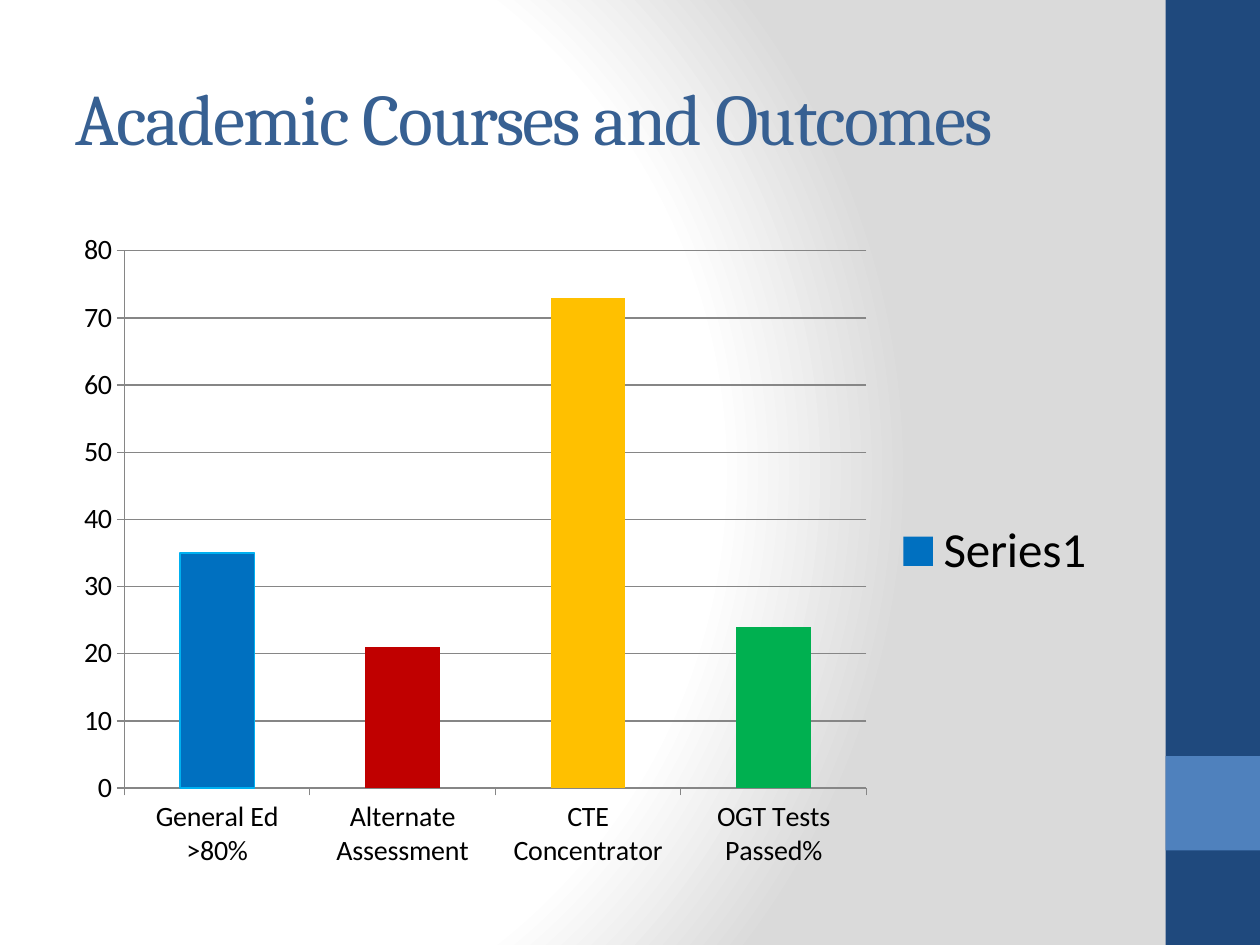
from typing import NamedTuple

from lxml import etree
from pptx import Presentation
from pptx.chart.data import CategoryChartData
from pptx.dml.color import RGBColor
from pptx.enum.chart import XL_CHART_TYPE, XL_LEGEND_POSITION, XL_TICK_MARK
from pptx.enum.shapes import MSO_SHAPE
from pptx.enum.text import MSO_ANCHOR
from pptx.oxml.ns import qn
from pptx.util import Inches, Pt

COLUMNS = XL_CHART_TYPE.COLUMN_CLUSTERED
LEGEND_RIGHT = XL_LEGEND_POSITION.RIGHT
TICK_OUTSIDE = XL_TICK_MARK.OUTSIDE
RECTANGLE = MSO_SHAPE.RECTANGLE
MIDDLE = MSO_ANCHOR.MIDDLE

AXIS_GREY = "868686"


class Band(NamedTuple):
    top: float
    height: float
    color: str


class Outcome(NamedTuple):
    label: str
    percent: int
    color: str


BANDS = [Band(0, 7.5, "1F497D"), Band(6, 0.75, "4F81BD")]
OUTCOMES = [
    Outcome("General Ed >80%", 35, "0070C0"),
    Outcome("Alternate Assessment", 21, "C00000"),
    Outcome("CTE Concentrator", 73, "FFC000"),
    Outcome("OGT Tests Passed%", 24, "00B050"),
]
GLOW_STOPS = [(0, "FFFFFF"), (75, "FFFFFF"), (100, "DADADA")]
GLOW_CENTRE = {"l": 20, "t": 50, "r": 100, "b": 50}


def rgb(color: str) -> RGBColor:
    return RGBColor.from_string(color)


def paint(fill, color: str) -> None:
    fill.solid()
    fill.fore_color.rgb = rgb(color)


def set_font(font, name: str, size: float, color: str) -> None:
    font.name = name
    font.size = Pt(size)
    font.color.rgb = rgb(color)


def paint_background(slide) -> None:
    slide.background.fill.gradient()
    glow = next(slide.element.iter(qn("a:gradFill")))
    for child in list(glow):
        glow.remove(child)
    stops = etree.SubElement(glow, qn("a:gsLst"))
    for position, color in GLOW_STOPS:
        stop = etree.SubElement(stops, qn("a:gs"), pos=str(position * 1000))
        etree.SubElement(stop, qn("a:srgbClr"), val=color)
    circle = etree.SubElement(glow, qn("a:path"), {"path": "circle"})
    edges = {side: str(share * 1000) for side, share in GLOW_CENTRE.items()}
    etree.SubElement(circle, qn("a:fillToRect"), edges)


def draw_band(slide, band: Band) -> None:
    stripe = slide.shapes.add_shape(
        RECTANGLE, Inches(9.25), Inches(band.top), Inches(0.75), Inches(band.height)
    )
    stripe.shadow.inherit = False
    paint(stripe.fill, band.color)
    stripe.line.fill.background()


def draw_title(slide, wording: str) -> None:
    title = slide.shapes.add_textbox(Inches(0.5), Inches(0.3), Inches(8.33), Inches(1.25))
    frame = title.text_frame
    frame.word_wrap = True
    frame.vertical_anchor = MIDDLE
    paragraph = frame.paragraphs[0]
    run = paragraph.add_run()
    run.text = wording
    set_font(paragraph.font, "Cambria", 41.4, "376092")
    run.font._element.set("spc", "-100")


def style_axis(axis) -> None:
    axis.major_tick_mark = TICK_OUTSIDE
    set_font(axis.tick_labels.font, "Calibri", 16, "000000")
    axis.format.line.color.rgb = rgb(AXIS_GREY)
    axis.format.line.width = Pt(0.75)


def draw_outcomes_chart(slide) -> None:
    outcomes_data = CategoryChartData()
    outcomes_data.categories = [outcome.label for outcome in OUTCOMES]
    outcomes_data.add_series("Series1", [outcome.percent for outcome in OUTCOMES])
    chart = slide.shapes.add_chart(
        COLUMNS, Inches(0.5), Inches(1.75), Inches(8.33), Inches(5.25), outcomes_data
    ).chart
    set_font(chart.font, "Calibri", 10, "000000")
    chart.has_title = False

    chart.has_legend = True
    chart.legend.position = LEGEND_RIGHT
    chart.legend.include_in_layout = False
    set_font(chart.legend.font, "Calibri", 28, "000000")

    style_axis(chart.category_axis)
    percent_axis = chart.value_axis
    style_axis(percent_axis)
    percent_axis.minimum_scale = 0
    percent_axis.maximum_scale = 80
    percent_axis.major_unit = 10
    percent_axis.has_major_gridlines = True
    gridline = percent_axis.major_gridlines.format.line
    gridline.color.rgb = rgb(AXIS_GREY)
    gridline.width = Pt(0.75)

    plot = chart.plots[0]
    plot.vary_by_categories = False
    plot.gap_width = 150
    series = plot.series[0]
    paint(series.format.fill, OUTCOMES[0].color)
    for index, outcome in enumerate(OUTCOMES):
        paint(series.points[index].format.fill, outcome.color)
    first_outline = series.points[0].format.line
    first_outline.color.rgb = rgb("00B0F0")
    first_outline.width = Pt(0.75)


def main() -> None:
    deck = Presentation()
    deck.slide_width = Inches(10)
    deck.slide_height = Inches(7.5)
    slide = deck.slides.add_slide(deck.slide_layouts[6])
    paint_background(slide)
    for band in BANDS:
        draw_band(slide, band)
    draw_title(slide, "Academic Courses and Outcomes")
    draw_outcomes_chart(slide)
    deck.save("out.pptx")


if __name__ == "__main__":
    main()
